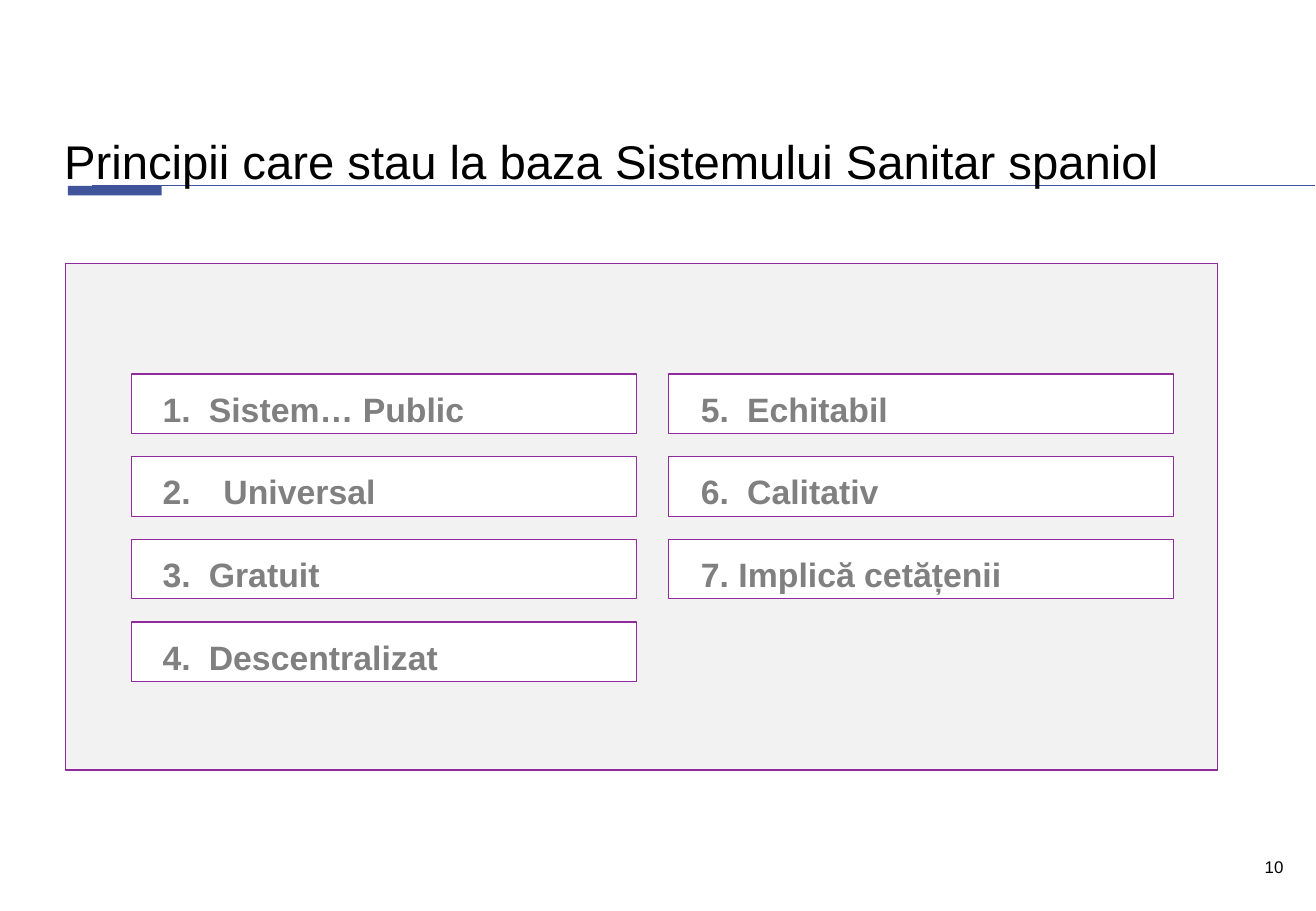
import dataclasses

import pptx
import pptx.dml.color
import pptx.enum.shapes
import pptx.enum.text
import pptx.util
from lxml import etree
from pptx.oxml.ns import qn

Inches = pptx.util.Inches
Pt = pptx.util.Pt


@dataclasses.dataclass(frozen=True)
class Theme:
    font: str = "Arial"
    panel: str = "F2F2F2"
    white: str = "FFFFFF"
    border: str = "902B9B"
    accent: str = "40549B"
    item: str = "808080"
    black: str = "000000"
    title_size: int = 28
    item_size: int = 20
    number_size: int = 10
    line_width: float = 0.75
    item_gap: int = 25


THEME = Theme()
ROW_TOP, ROW_PITCH = 3.08, 0.68
COLUMNS = (
    (1.08, 1.24, 3.81, ("1.\tSistem… Public", "Universal", "3.\tGratuit", "4.\tDescentralizat")),
    (5.5, 5.67, 4.31, ("5.\tEchitabil", "6.\tCalitativ", "7. Implică cetățenii")),
)
AUTO_NUMBERS = {"Universal": 2}


def rgb(color):
    return pptx.dml.color.RGBColor.from_string(color)


def add_box(s, left, top, width, height, fill, border=None):
    sp = s.shapes.add_shape(
        pptx.enum.shapes.MSO_SHAPE.RECTANGLE,
        Inches(left), Inches(top), Inches(width), Inches(height))
    sp.shadow.inherit = False
    sp.fill.solid()
    sp.fill.fore_color.rgb = rgb(fill)
    if border:
        sp.line.color.rgb = rgb(border)
        sp.line.width = Pt(THEME.line_width)
    else:
        sp.line.fill.background()


def add_rule(s, x1, x2, y):
    line = s.shapes.add_connector(
        pptx.enum.shapes.MSO_CONNECTOR.STRAIGHT,
        Inches(x1), Inches(y), Inches(x2), Inches(y))
    line.line.color.rgb = rgb(THEME.accent)
    line.line.width = Pt(THEME.line_width)
    etree.SubElement(line._element.spPr, qn("a:effectLst"))


def add_text_frame(s, left, top, width, height):
    tf = s.shapes.add_textbox(
        Inches(left), Inches(top), Inches(width), Inches(height)).text_frame
    tf.word_wrap = True
    return tf


def add_run(p, text, size, color, bold=False):
    r = p.add_run()
    r.text = text
    r.font.name = THEME.font
    r.font.size = Pt(size)
    r.font.bold = bold
    r.font.color.rgb = rgb(color)


def set_hanging(p, indent, start=None):
    pPr = p._p.get_or_add_pPr()
    pPr.set("marL", str(Inches(indent)))
    pPr.set("indent", str(-Inches(indent)))
    if start:
        etree.SubElement(pPr, qn("a:buFont"), typeface=THEME.font)
        etree.SubElement(pPr, qn("a:buAutoNum"), type="arabicPeriod", startAt=str(start))


def add_items(s, left, width, items):
    tf = add_text_frame(s, left, 3.15, width, 2.6)
    for i, item in enumerate(items):
        p = tf.add_paragraph() if i else tf.paragraphs[0]
        start = AUTO_NUMBERS.get(item)
        set_hanging(p, 0.5 if start else 0.38, start)
        if i:
            p.space_before = Pt(THEME.item_gap)
        add_run(p, item, THEME.item_size, THEME.item, bold=True)


def main():
    prs = pptx.Presentation()
    prs.slide_width, prs.slide_height = Inches(10.83), Inches(7.5)
    s = prs.slides.add_slide(prs.slide_layouts[6])

    add_box(s, 0.54, 2.17, 9.48, 4.17, THEME.panel, THEME.border)
    for box_left, text_left, text_width, items in COLUMNS:
        for row in range(len(items)):
            add_box(s, box_left, ROW_TOP + row * ROW_PITCH, 4.16, 0.49,
                    THEME.white, THEME.border)
        add_items(s, text_left, text_width, items)

    add_box(s, 0.56, 1.53, 0.77, 0.08, THEME.accent)
    add_rule(s, 0.76, 10.82, 1.53)

    title = add_text_frame(s, 0.43, 1.04, 10.14, 0.79)
    add_run(title.paragraphs[0], "Principii care stau la baza Sistemului Sanitar spaniol",
            THEME.title_size, THEME.black)

    number = add_text_frame(s, 8.4, 7, 2.26, 0.42)
    number.paragraphs[0].alignment = pptx.enum.text.PP_ALIGN.RIGHT
    add_run(number.paragraphs[0], "10", THEME.number_size, THEME.black)

    prs.save("out.pptx")


if __name__ == "__main__":
    main()
